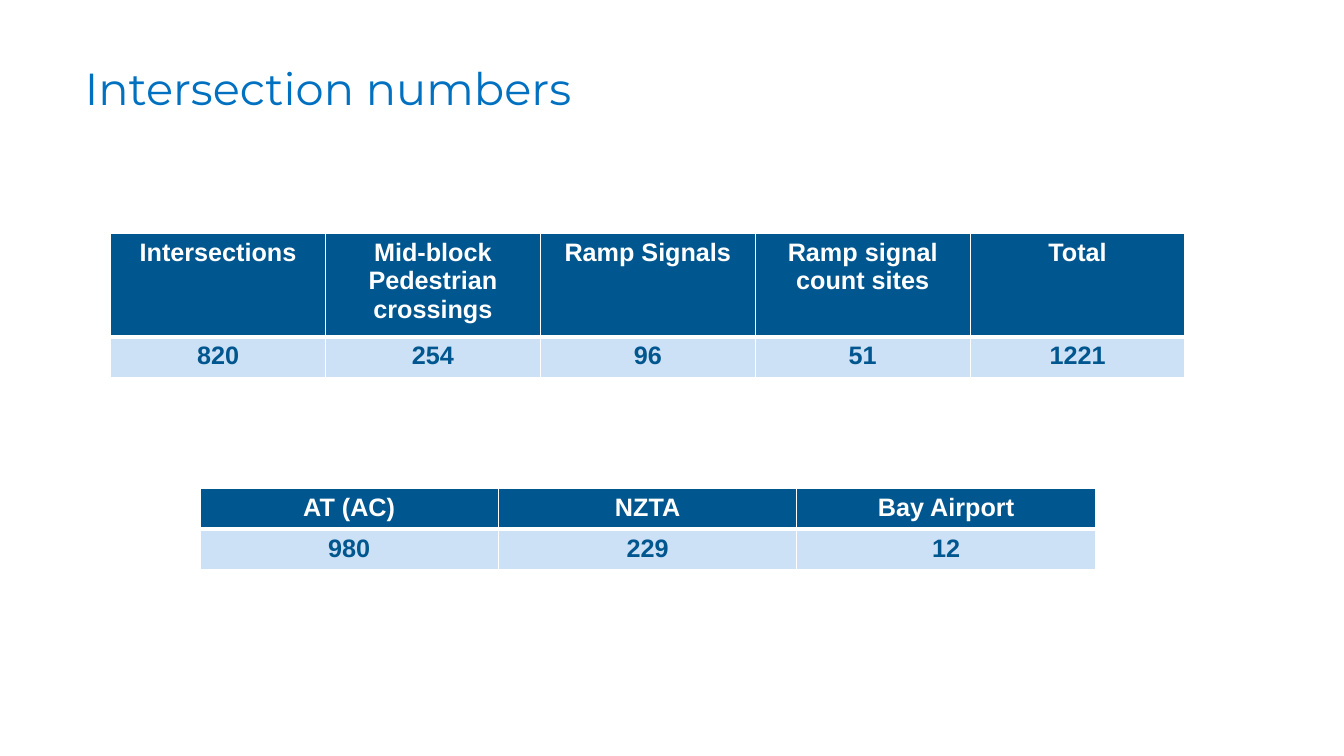
from lxml.etree import SubElement
from pptx import Presentation
from pptx.dml.color import RGBColor
from pptx.enum.text import MSO_ANCHOR, PP_ALIGN
from pptx.oxml.ns import qn
from pptx.util import Pt

NAVY, PALE_BLUE, WHITE = "00568E", "CCE1F5", "FFFFFF"


def rgb(color):
    return RGBColor.from_string(color)


def add_borders(cell, widths):
    """Draw white borders; widths are points for left, right, top and bottom."""
    properties = cell._tc.get_or_add_tcPr()
    for position, (side, width) in enumerate(zip("LRTB", widths)):
        line = SubElement(properties, qn(f"a:ln{side}"), w=str(Pt(width)))
        fill = SubElement(line, qn("a:solidFill"))
        SubElement(fill, qn("a:srgbClr"), val=WHITE)
        properties.insert(position, line)  # borders come before the cell fill


presentation = Presentation()
presentation.slide_width, presentation.slide_height = Pt(960), Pt(540)
slide = presentation.slides.add_slide(presentation.slide_layouts[6])

title = slide.shapes.add_textbox(Pt(53.5), Pt(46), Pt(492), Pt(42)).text_frame
title.word_wrap = True
title.vertical_anchor = MSO_ANCHOR.MIDDLE
paragraph = title.paragraphs[0]
paragraph.text = "Intersection numbers"
paragraph.line_spacing = 0.7
paragraph.font.name = "Montserrat"
paragraph.font.size = Pt(32)
paragraph.font.color.rgb = rgb("0070C0")

# left, top, column width, row heights, rows
tables = [
    (79, 167, 153.5, (73.5, 29.2), [
        ("Intersections", "Mid-block Pedestrian crossings", "Ramp Signals",
         "Ramp signal count sites", "Total"),
        ("820", "254", "96", "51", "1221"),
    ]),
    (142.8, 348.8, 213.2, (29.2, 29.2), [
        ("AT (AC)", "NZTA", "Bay Airport"),
        ("980", "229", "12"),
    ]),
]
row_styles = [  # fill, text colour, border widths
    (NAVY, WHITE, (1, 1, 1, 3)),
    (PALE_BLUE, NAVY, (1, 1, 3, 1)),
]

for left, top, column_width, row_heights, rows in tables:
    column_count = len(rows[0])
    table = slide.shapes.add_table(
        len(rows), column_count, Pt(left), Pt(top),
        Pt(column_width * column_count), Pt(sum(row_heights))).table
    for column in table.columns:
        column.width = Pt(column_width)
    for row, height, texts, style in zip(table.rows, row_heights, rows, row_styles):
        row.height = Pt(height)
        fill_color, text_color, border_widths = style
        for cell, text in zip(row.cells, texts):
            cell.fill.solid()
            cell.fill.fore_color.rgb = rgb(fill_color)
            add_borders(cell, border_widths)
            paragraph = cell.text_frame.paragraphs[0]
            paragraph.text = text
            paragraph.alignment = PP_ALIGN.CENTER
            paragraph.font.name = "Arial"
            paragraph.font.size = Pt(18)
            paragraph.font.bold = True
            paragraph.font.color.rgb = rgb(text_color)

presentation.save("out.pptx")
